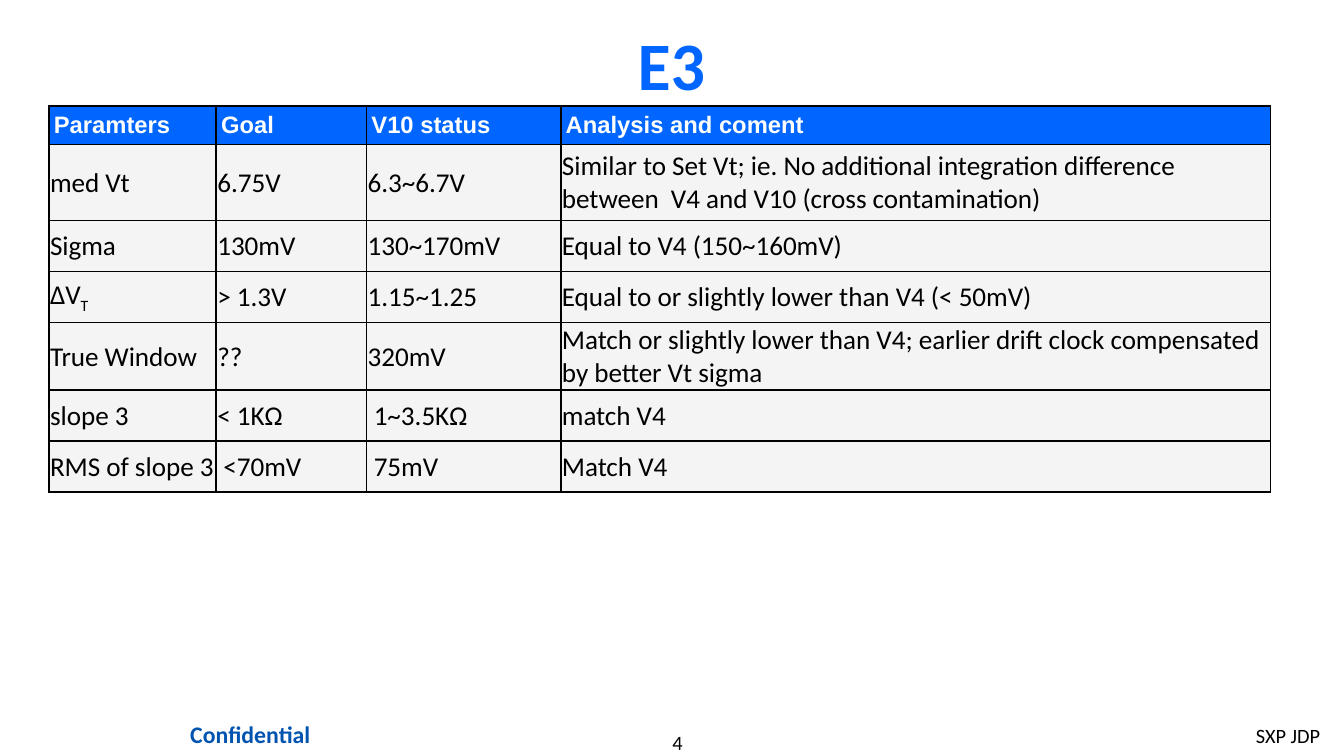
import pptx
import pptx.util
import pptx.dml.color
import pptx.enum.text
import pptx.oxml
import pptx.oxml.ns

Pt = pptx.util.Pt
ALIGN = pptx.enum.text.PP_ALIGN
ANCHOR = pptx.enum.text.MSO_ANCHOR

COLORS = {"blue": "0066FF", "navy": "0054B0", "black": "000000",
          "white": "FFFFFF", "grey": "F4F4F4"}

# Content: a tuple in a cell is (text, subscript)
HEADER = ["Paramters", "Goal", "V10 status", "Analysis and coment"]
ROWS = [
    ["med Vt", "6.75V", "6.3~6.7V",
     "Similar to Set Vt; ie. No additional integration difference "
     "between  V4 and V10 (cross contamination)"],
    ["Sigma", "130mV", "130~170mV", "Equal to V4 (150~160mV)"],
    [("∆V", "T"), "> 1.3V", "1.15~1.25",
     "Equal to or slightly lower than V4 (< 50mV)"],
    ["True Window", "??", "320mV",
     "Match or slightly lower than V4; earlier drift clock compensated "
     "by better Vt sigma"],
    ["slope 3", "< 1KΩ", " 1~3.5KΩ", "match V4"],
    ["RMS of slope 3", " <70mV", " 75mV", "Match V4"],
]
COLUMN_WIDTHS = [98.6, 88.6, 114.5, 418.3]
ROW_HEIGHTS = [21.2, 44.8, 30, 30, 40, 30, 30]
TABLE_LEFT, TABLE_TOP = 28.8, 62.6

# Text, box (left, top, width, height), margins (x, y), size, colour, bold, alignment
LABELS = [
    ("E3", (59, 10.1, 673.2, 54.7), (7.2, 3.6), 40, "blue", True, ALIGN.CENTER),
    ("Confidential", (91.4, 420.5, 112.3, 24.5), (7.2, 3.6), 14, "navy", True, ALIGN.CENTER),
    ("4", (329.8, 430.6, 139, 14.4), (0, 0), 12, "black", False, ALIGN.CENTER),
    ("SXP JDP", (733, 422.6, 59, 21.6), (7.2, 3.6), 12, "black", False, ALIGN.LEFT),
]


def rgb(name):
    return pptx.dml.color.RGBColor.from_string(COLORS[name])


def set_font(para, name, size, color, bold):
    para.font.name = name
    para.font.size = Pt(size)
    para.font.bold = bold
    para.font.color.rgb = rgb(color)


def add_label(page, text, area, margins, size, color, bold, align):
    box = page.shapes.add_textbox(*map(Pt, area))
    frame = box.text_frame
    frame.word_wrap = True
    frame.vertical_anchor = ANCHOR.MIDDLE
    frame.margin_left = frame.margin_right = Pt(margins[0])
    frame.margin_top = frame.margin_bottom = Pt(margins[1])
    para = frame.paragraphs[0]
    para.text = text
    para.alignment = align
    set_font(para, "Calibri", size, color, bold)


def add_borders(cell):
    properties = cell._tc.get_or_add_tcPr()
    for index, side in enumerate(("lnL", "lnR", "lnT", "lnB")):
        line = pptx.oxml.parse_xml(
            f'<a:{side} {pptx.oxml.ns.nsdecls("a")} w="{Pt(1)}"><a:solidFill>'
            f'<a:srgbClr val="{COLORS["black"]}"/></a:solidFill></a:{side}>')
        properties.insert(index, line)


def fill_cell(cell, content, is_header):
    margin = 2.9 if is_header else 0.7
    cell.margin_left = cell.margin_right = cell.margin_top = Pt(margin)
    cell.margin_bottom = Pt(margin if is_header else 0)
    cell.vertical_anchor = ANCHOR.MIDDLE
    cell.fill.solid()
    cell.fill.fore_color.rgb = rgb("blue" if is_header else "grey")
    add_borders(cell)
    para = cell.text_frame.paragraphs[0]
    base, subscript = content if isinstance(content, tuple) else (content, None)
    para.add_run().text = base
    if subscript:
        span = para.add_run()
        span.text = subscript
        span.font._element.set("baseline", "-25000")
    if is_header:
        set_font(para, "Arial", 14, "white", True)
    else:
        set_font(para, "Calibri", 16, "black", False)


def add_status_table(page):
    lines = [HEADER] + ROWS
    table = page.shapes.add_table(
        len(lines), len(HEADER), Pt(TABLE_LEFT), Pt(TABLE_TOP),
        Pt(sum(COLUMN_WIDTHS)), Pt(sum(ROW_HEIGHTS))).table
    for column, width in zip(table.columns, COLUMN_WIDTHS):
        column.width = Pt(width)
    for row_index, (row, height) in enumerate(zip(table.rows, ROW_HEIGHTS)):
        row.height = Pt(height)
        for cell, content in zip(row.cells, lines[row_index]):
            fill_cell(cell, content, row_index == 0)


def main():
    deck = pptx.Presentation()
    deck.slide_width, deck.slide_height = Pt(792), Pt(445.7)
    page = deck.slides.add_slide(deck.slide_layouts[6])

    # Title and footer
    for label in LABELS:
        add_label(page, *label)

    # Parameter status
    add_status_table(page)
    deck.save("out.pptx")


if __name__ == "__main__":
    main()
